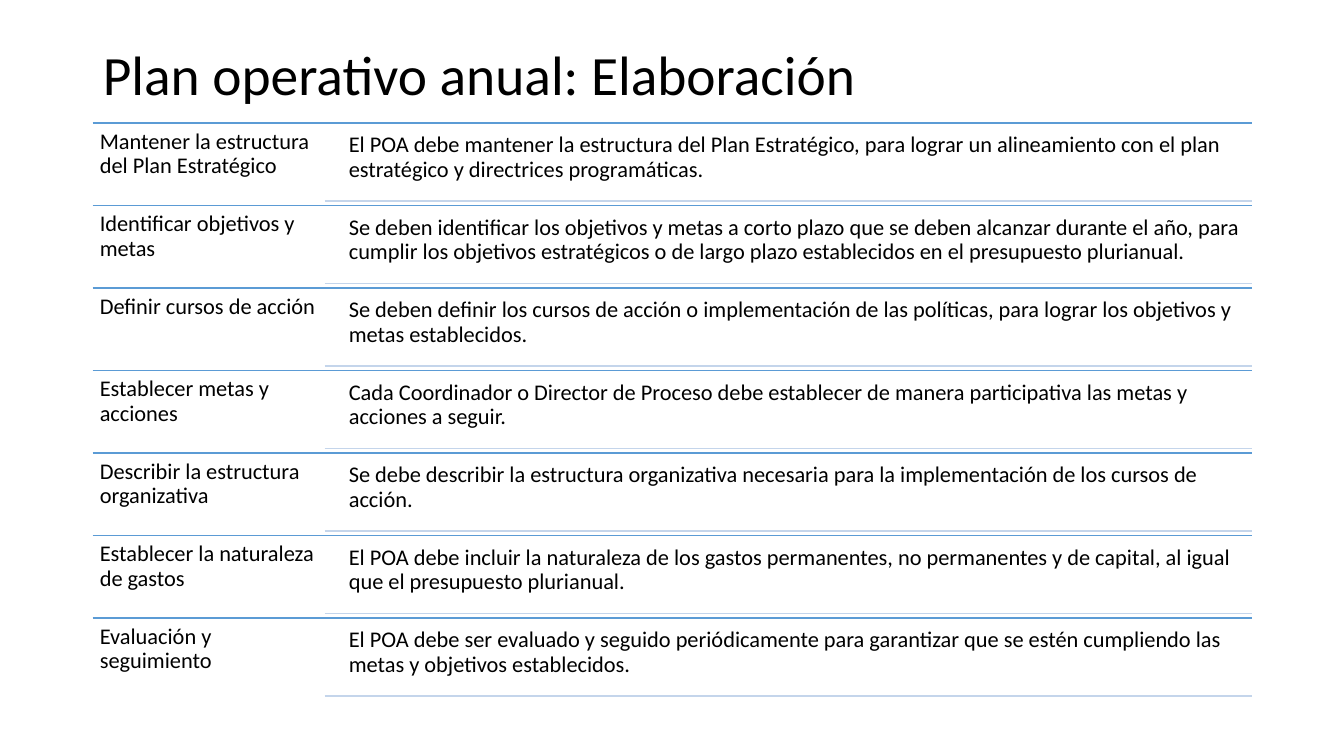
from lxml import etree
from pptx import Presentation
from pptx.dml.color import RGBColor
from pptx.enum.shapes import MSO_CONNECTOR
from pptx.enum.text import MSO_ANCHOR, MSO_AUTO_SIZE, PP_ALIGN
from pptx.oxml.ns import qn
from pptx.util import Inches, Pt

STRAIGHT = MSO_CONNECTOR.STRAIGHT
TOP = MSO_ANCHOR.TOP
MIDDLE = MSO_ANCHOR.MIDDLE
LEFT = PP_ALIGN.LEFT
NO_FIT = MSO_AUTO_SIZE.NONE

FONT = "Calibri"
BLACK = "000000"
STEP_BLUE = "5B9BD5"
DETAIL_BLUE = "C4D5EB"
TITLE_ONLY = 5

STEPS = [
    ("Mantener la estructura del Plan Estratégico",
     "El POA debe mantener la estructura del Plan Estratégico, para lograr un "
     "alineamiento con el plan estratégico y directrices programáticas."),
    ("Identificar objetivos y metas",
     "Se deben identificar los objetivos y metas a corto plazo que se deben "
     "alcanzar durante el año, para cumplir los objetivos estratégicos o de "
     "largo plazo establecidos en el presupuesto plurianual."),
    ("Definir cursos de acción",
     "Se deben definir los cursos de acción o implementación de las políticas, "
     "para lograr los objetivos y metas establecidos."),
    ("Establecer metas y acciones",
     "Cada Coordinador o Director de Proceso debe establecer de manera "
     "participativa las metas y acciones a seguir."),
    ("Describir la estructura organizativa",
     "Se debe describir la estructura organizativa necesaria para la "
     "implementación de los cursos de acción."),
    ("Establecer la naturaleza de gastos",
     "El POA debe incluir la naturaleza de los gastos permanentes, no "
     "permanentes y de capital, al igual que el presupuesto plurianual."),
    ("Evaluación y seguimiento",
     "El POA debe ser evaluado y seguido periódicamente para garantizar que se "
     "estén cumpliendo las metas y objetivos establecidos."),
]


def color(hex_code):
    return RGBColor.from_string(hex_code)


def write(frame, text, size, anchor):
    frame.word_wrap = True
    frame.auto_size = NO_FIT
    frame.vertical_anchor = anchor
    paragraph = frame.paragraphs[0]
    paragraph.text = text
    paragraph.alignment = LEFT
    paragraph.line_spacing = 0.9
    paragraph.font.name = FONT
    paragraph.font.size = Pt(size)
    paragraph.font.color.rgb = color(BLACK)


def add_rule(slide, left, top, width, hex_code):
    rule = slide.shapes.add_connector(
        STRAIGHT, Inches(left), Inches(top), Inches(left + width), Inches(top))
    rule.line.color.rgb = color(hex_code)
    rule.line.width = Pt(1)
    etree.SubElement(rule._element.spPr, qn("a:effectLst"))


def add_label(slide, left, top, width, height, text):
    label = slide.shapes.add_textbox(
        Inches(left), Inches(top), Inches(width), Inches(height))
    frame = label.text_frame
    frame.margin_left = frame.margin_right = Inches(0.07)
    frame.margin_top = frame.margin_bottom = Inches(0.07)
    write(frame, text, 16, TOP)


def add_title(slide, left, top, width, height):
    title = slide.shapes.title
    title.left, title.top = Inches(left), Inches(top)
    title.width, title.height = Inches(width), Inches(height)
    write(title.text_frame, "Plan operativo anual: Elaboración", 39.6, MIDDLE)


def add_step(slide, left, top, width, height, name, detail):
    name_width = width * 0.2
    indent = name_width + 0.17
    inset = 0.035
    detail_height = height - 0.08
    add_rule(slide, left, top, width, STEP_BLUE)
    add_label(slide, left, top, name_width, height, name)
    add_label(slide, left + indent, top + inset, width - indent,
              detail_height, detail)
    add_rule(slide, left + name_width, top + inset + detail_height,
             width - name_width, DETAIL_BLUE)


def add_steps(slide, left, top, width, height):
    step_height = height / len(STEPS)
    for index, (name, detail) in enumerate(STEPS):
        add_step(slide, left, top + index * step_height, width, step_height,
                 name, detail)


def main():
    deck = Presentation()
    deck.slide_width, deck.slide_height = Inches(13.33), Inches(7.5)
    slide = deck.slides.add_slide(deck.slide_layouts[TITLE_ONLY])
    add_title(slide, 0.92, 0.4, 11.5, 0.74)
    add_steps(slide, 0.92, 1.22, 11.5, 5.73)
    deck.save("out.pptx")


if __name__ == "__main__":
    main()
